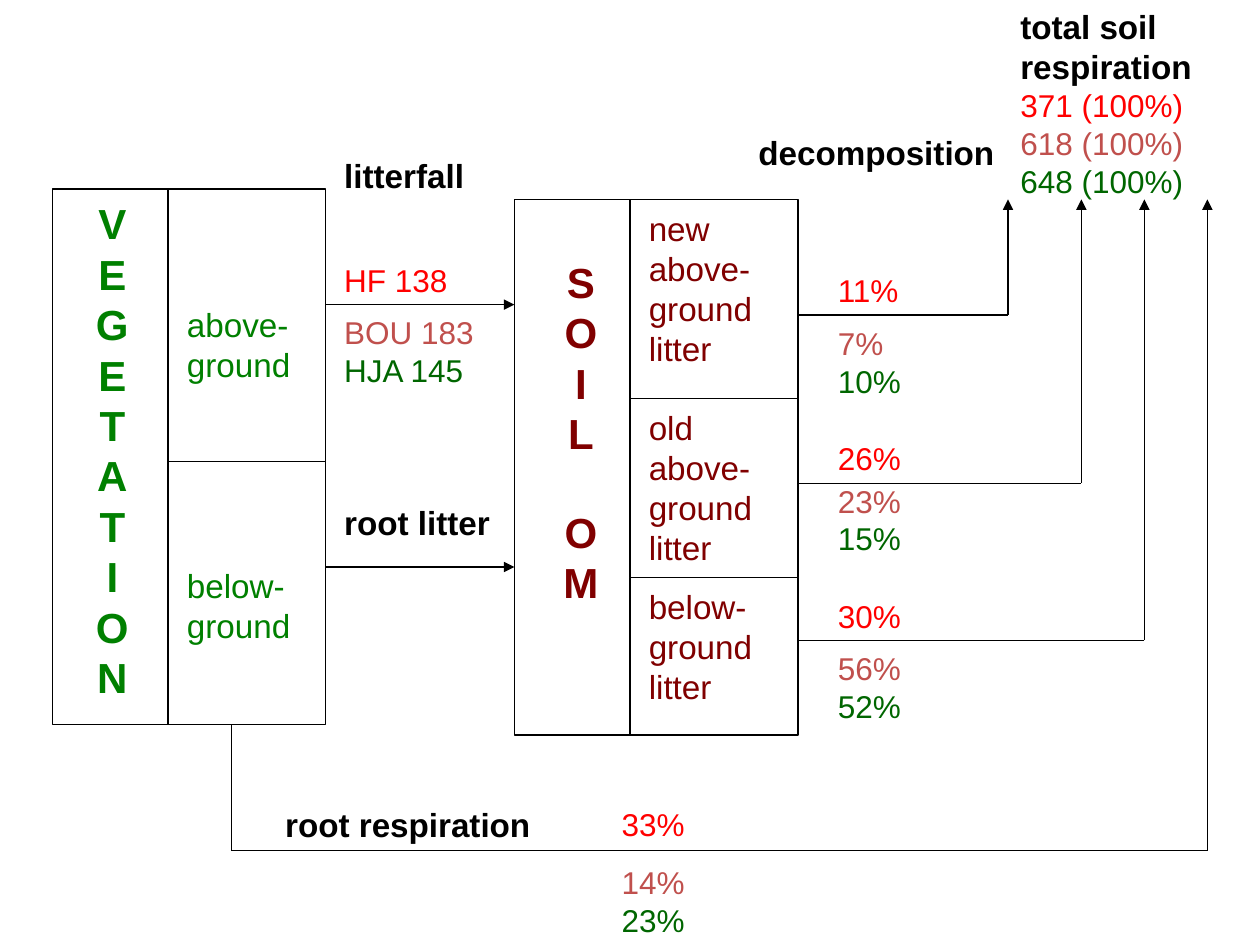
import pptx
import pptx.util
import pptx.dml.color
import pptx.enum.shapes
import pptx.enum.text
import pptx.oxml.ns
import lxml.etree

Cm = pptx.util.Cm
Pt = pptx.util.Pt
COLORS = {
    "ink": "000000",
    "paper": "FFFFFF",
    "vegetation": "008000",
    "soil": "800000",
    "HF": "FF0000",
    "BOU": "C0504D",
    "HJA": "006600",
}
SITES = ["HF", "BOU", "HJA"]


def rgb(name):
    return pptx.dml.color.RGBColor.from_string(COLORS[name])


class FlowDiagram:
    font = "Arial"
    line_width = Pt(0.75)

    def __init__(self, slide):
        self.slide = slide

    def set_rows(self, shape, rows, inset=(0.38, 0.18), centred=False):
        frame = shape.text_frame
        frame.word_wrap = True
        frame.vertical_anchor = pptx.enum.text.MSO_ANCHOR.TOP
        frame.margin_left, frame.margin_top = Cm(inset[0]), Cm(inset[1])
        frame.margin_right, frame.margin_bottom = Cm(0.25), Cm(0.13)
        frame.text = "\n".join(row[0] for row in rows)
        align = pptx.enum.text.PP_ALIGN
        for paragraph, (_, size, color, bold) in zip(frame.paragraphs, rows):
            paragraph.alignment = align.CENTER if centred else align.LEFT
            for run in paragraph.runs:
                run.font.name = self.font
                run.font.size = Pt(size)
                run.font.bold = bold
                run.font.color.rgb = rgb(color)
        return frame

    def box(self, x, y, width, height, rows, inset=(0.38, 0.18), centred=False):
        rectangle = self.slide.shapes.add_shape(
            pptx.enum.shapes.MSO_SHAPE.RECTANGLE, Cm(x), Cm(y), Cm(width), Cm(height))
        rectangle.shadow.inherit = False
        rectangle.fill.solid()
        rectangle.fill.fore_color.rgb = rgb("paper")
        rectangle.line.color.rgb = rgb("ink")
        rectangle.line.width = self.line_width
        return self.set_rows(rectangle, rows, inset, centred)

    def label(self, x, y, width, height, rows, inset=(0.38, 0.18)):
        area = self.slide.shapes.add_textbox(Cm(x), Cm(y), Cm(width), Cm(height))
        return self.set_rows(area, rows, inset)

    def title(self, x, y, width, text, inset=(0.38, 0.18)):
        self.label(x, y, width, 1.07, [(text, 19, "ink", True)], inset)

    def readings(self, x, upper, lower, values, inset=(0.38, 0.18)):
        rows = [(value, 18, site, False) for value, site in zip(values, SITES)]
        self.label(x, upper, 3.81, 1.07, rows[:1], inset)
        self.label(x, lower, 3.81, 1.78, rows[1:], inset)

    def line(self, x1, y1, x2, y2, arrow=False):
        connector = self.slide.shapes.add_connector(
            pptx.enum.shapes.MSO_CONNECTOR.STRAIGHT, Cm(x1), Cm(y1), Cm(x2), Cm(y2))
        connector.line.color.rgb = rgb("ink")
        connector.line.width = self.line_width
        qn = pptx.oxml.ns.qn
        properties = connector.element.spPr
        if arrow:
            lxml.etree.SubElement(properties.find(qn("a:ln")), qn("a:tailEnd"), type="triangle")
        lxml.etree.SubElement(properties, qn("a:effectLst"))


deck = pptx.Presentation()
deck.slide_width, deck.slide_height = Cm(25.4), Cm(19.05)
diagram = FlowDiagram(deck.slides.add_slide(deck.slide_layouts[6]))

TIGHT = (0.25, 0.13)
VEGETATION_TOP, SOIL_TOP, POOL_HEIGHT = 3.81, 4.02, 10.8
VEGETATION_RIGHT, SOIL_LEFT, SOIL_RIGHT = 6.56, 10.37, 16.09
ROOT_X, ROOT_Y, TOTAL_X = 4.66, 17.15, 24.34
LABEL_RISE = 1.06

diagram.box(1.06, VEGETATION_TOP, 2.41, POOL_HEIGHT,
            [(letter, 24, "vegetation", True) for letter in "VEGETATION"], (0.25, 0.18), True)
soil_name = diagram.box(SOIL_LEFT, SOIL_TOP, 2.43, POOL_HEIGHT,
                        [(letter, 24, "soil", True) for letter in "SOILOM"], (0.5, 1.15), True)
soil_name.paragraphs[4].space_before = Pt(27.6)

pools = [
    (3.39, VEGETATION_TOP, 3.18, "vegetation", [
        (5.5, 2.33, ["above-", "ground"]),
        (5.3, 2.08, ["below-", "ground"]),
    ]),
    (12.7, SOIL_TOP, 3.39, "soil", [
        (4.02, 0.18, ["new", "above-ground", "litter"]),
        (3.6, 0.18, ["old", "above-ground", "litter"]),
        (3.18, 0.18, ["below-ground", "litter"]),
    ]),
]
for left, top, width, color, compartments in pools:
    for height, text_top, words in compartments:
        diagram.box(left, top, width, height,
                    [(word, 19, color, False) for word in words], (0.38, text_top))
        top += height

litterfall_y, root_litter_y = 6.14, 11.43
for flow_y in (litterfall_y, root_litter_y):
    diagram.line(VEGETATION_RIGHT, flow_y, SOIL_LEFT, flow_y, arrow=True)
diagram.title(VEGETATION_RIGHT, 2.96, 3.6, "litterfall")
diagram.title(VEGETATION_RIGHT, 9.95, 4.02, "root litter")
diagram.readings(VEGETATION_RIGHT, litterfall_y - LABEL_RISE, litterfall_y,
                 ["HF 138", "BOU 183", "HJA 145"])

decomposition = [
    (20.32, 6.35, 6.35, ["11%", "7%", "10%"]),
    (21.8, 9.74, 9.53, ["26%", "23%", "15%"]),
    (23.07, 12.91, 12.91, ["30%", "56%", "52%"]),
]
for riser_x, flow_y, lower_y, shares in decomposition:
    diagram.line(SOIL_RIGHT, flow_y, riser_x, flow_y)
    diagram.line(riser_x, flow_y, riser_x, SOIL_TOP, arrow=True)
    diagram.readings(16.51, flow_y - LABEL_RISE, lower_y, shares)
diagram.title(15.04, 2.54, 6.15, "decomposition", TIGHT)

diagram.line(ROOT_X, VEGETATION_TOP + POOL_HEIGHT, ROOT_X, ROOT_Y)
diagram.line(ROOT_X, ROOT_Y, TOTAL_X, ROOT_Y)
diagram.line(TOTAL_X, ROOT_Y, TOTAL_X, SOIL_TOP, arrow=True)
diagram.title(5.5, 16.09, 5.72, "root respiration", TIGHT)
diagram.readings(12.28, 16.09, 17.27, ["33%", "14%", "23%"], TIGHT)

totals = ["371 (100%)", "618 (100%)", "648 (100%)"]
diagram.label(20.32, 0, 5.08, 4.14,
              [("total soil respiration", 19, "ink", True)]
              + [(total, 18, site, False) for total, site in zip(totals, SITES)], TIGHT)

deck.save("out.pptx")
